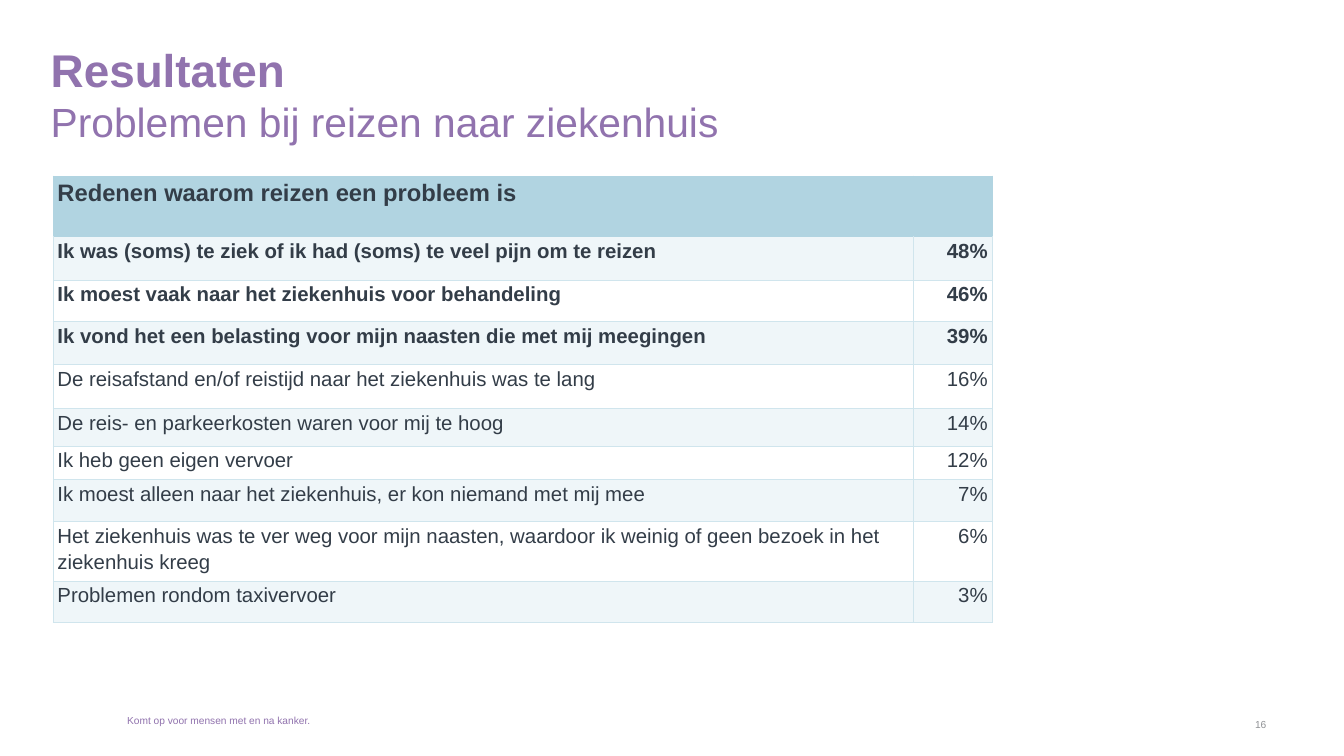
from lxml.etree import SubElement
from pptx import Presentation
from pptx.dml.color import RGBColor
from pptx.enum.text import MSO_ANCHOR, PP_ALIGN
from pptx.oxml import parse_xml
from pptx.oxml.ns import nsdecls, qn
from pptx.util import Inches, Pt

PURPLE, GREY, INK = "9173AE", "909295", "333D48"
HEADER_BLUE, BAND_BLUE, RULE_BLUE = "B1D4E1", "EFF6F9", "D0E5ED"

TABLE_HEADING = "Redenen waarom reizen een probleem is"
# Reason, share of patients, row height
REASONS = [
    ("Ik was (soms) te ziek of ik had (soms) te veel pijn om te reizen", "48%", 0.71),
    ("Ik moest vaak naar het ziekenhuis voor behandeling", "46%", 0.68),
    ("Ik vond het een belasting voor mijn naasten die met mij meegingen", "39%", 0.71),
    ("De reisafstand en/of reistijd naar het ziekenhuis was te lang", "16%", 0.71),
    ("De reis- en parkeerkosten waren voor mij te hoog", "14%", 0.62),
    ("Ik heb geen eigen vervoer", "12%", 0.55),
    ("Ik moest alleen naar het ziekenhuis, er kon niemand met mij mee", "7%", 0.68),
    ("Het ziekenhuis was te ver weg voor mijn naasten, waardoor ik weinig of "
     "geen bezoek in het ziekenhuis kreeg", "6%", 0.98),
    ("Problemen rondom taxivervoer", "3%", 0.68),
]
HEADER_HEIGHT = 0.99
COLUMN_WIDTHS = [14.07, 1.29]
MAIN_REASONS = 3


def color(code):
    return RGBColor.from_string(code)


class PageBuilder:
    """Holds the font and the current page."""

    def __init__(self, page, font_name="Arial"):
        self.page = page
        self.font_name = font_name

    def style(self, font, size, code, bold=False):
        font.name = self.font_name
        font.size = Pt(size)
        font.bold = bold
        font.color.rgb = color(code)

    def frame(self, left, top, width, height, anchor=MSO_ANCHOR.TOP):
        box = self.page.shapes.add_textbox(
            Inches(left), Inches(top), Inches(width), Inches(height))
        frame = box.text_frame
        frame.margin_left = frame.margin_right = 0
        frame.margin_top = frame.margin_bottom = 0
        frame.word_wrap = True
        frame.vertical_anchor = anchor
        return frame

    def label(self, text, place, size, code, align=PP_ALIGN.LEFT):
        para = self.frame(*place).paragraphs[0]
        para.text = text
        para.alignment = align
        self.style(para.font, size, code)

    def title(self, heading, subheading, place):
        para = self.frame(*place, anchor=MSO_ANCHOR.BOTTOM).paragraphs[0]
        span = para.add_run()
        span.text = heading
        self.style(span.font, 54, PURPLE, bold=True)
        para.add_line_break()
        span = para.add_run()
        span.text = subheading
        self.style(span.font, 48, PURPLE)

    def table(self, left, top, widths, heights):
        table = self.page.shapes.add_table(
            len(heights), len(widths), Inches(left), Inches(top),
            Inches(sum(widths)), Inches(sum(heights))).table
        table.first_row = table.horz_banding = False
        for column, width in zip(table.columns, widths):
            column.width = Inches(width)
        for row, height in zip(table.rows, heights):
            row.height = Inches(height)
        return table

    def cell(self, cell, text, size, bold, fill, border, top_border,
             align=PP_ALIGN.LEFT):
        cell.margin_left = cell.margin_right = Inches(0.07)
        cell.margin_top = cell.margin_bottom = 0
        if fill:
            cell.fill.solid()
            cell.fill.fore_color.rgb = color(fill)
        else:
            cell.fill.background()
        self.borders(cell, border, top_border)
        para = cell.text_frame.paragraphs[0]
        para.text = text
        para.alignment = align
        para.line_spacing = 1.15
        self.style(para.font, size, INK, bold)

    def borders(self, cell, border, top_border):
        properties = cell._tc.get_or_add_tcPr()
        # Border lines come before the fill
        for index, side in enumerate(("lnL", "lnR", "lnT", "lnB")):
            line = parse_xml(f'<a:{side} {nsdecls("a")} w="{Pt(1)}"/>')
            solid = SubElement(line, qn("a:solidFill"))
            code = top_border if side == "lnT" else border
            SubElement(solid, qn("a:srgbClr"), val=code)
            properties.insert(index, line)


def main():
    deck = Presentation()
    deck.slide_width, deck.slide_height = Inches(21.99), Inches(12.37)
    builder = PageBuilder(deck.slides.add_slide(deck.slide_layouts[6]))

    # Title
    builder.title("Resultaten", "Problemen bij reizen naar ziekenhuis",
                  (0.83, 0.67, 19.67, 1.71))

    # Table heading
    heights = [HEADER_HEIGHT] + [height for _, _, height in REASONS]
    table = builder.table(0.87, 2.88, COLUMN_WIDTHS, heights)
    for column, text in enumerate((TABLE_HEADING, "")):
        builder.cell(table.cell(0, column), text, 28, True,
                     HEADER_BLUE, HEADER_BLUE, HEADER_BLUE)

    # Reasons, banded, with the main ones in bold
    for row, (reason, share, _) in enumerate(REASONS, start=1):
        fill = BAND_BLUE if row % 2 else None
        top_border = HEADER_BLUE if row == 1 else RULE_BLUE
        for column, (text, align) in enumerate(
                ((reason, PP_ALIGN.LEFT), (share, PP_ALIGN.RIGHT))):
            builder.cell(table.cell(row, column), text, 24, row <= MAIN_REASONS,
                         fill, RULE_BLUE, top_border, align)

    # Footer
    builder.label("Komt op voor mensen met en na kanker.",
                  (2.08, 11.69, 3.08, 0.22), 12, PURPLE)
    builder.label("16", (19.42, 11.76, 1.3, 0.15), 12, GREY, PP_ALIGN.RIGHT)

    deck.save("out.pptx")


if __name__ == "__main__":
    main()
